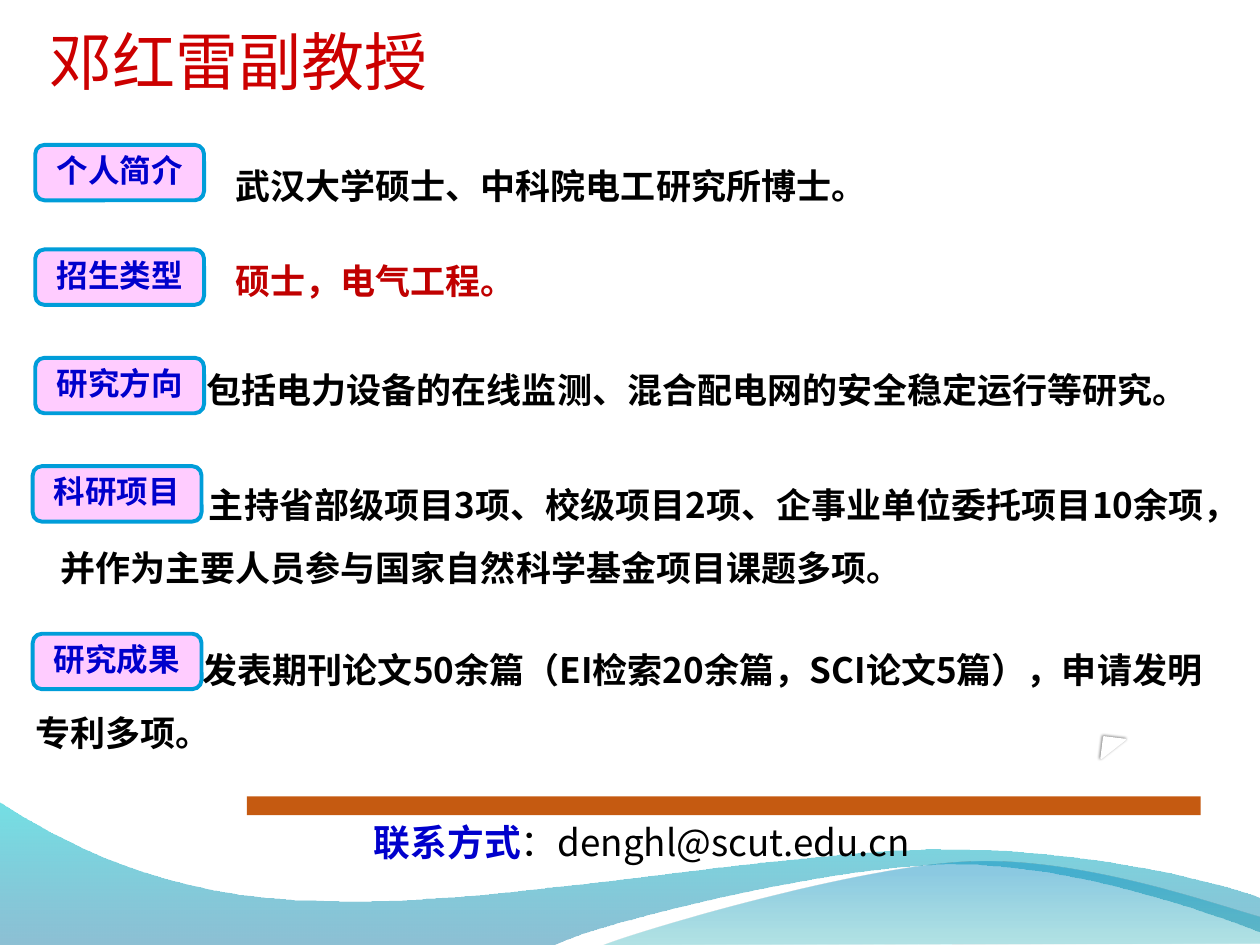
from lxml import etree
from pptx import Presentation
from pptx.dml.color import RGBColor
from pptx.enum.shapes import MSO_SHAPE
from pptx.enum.text import MSO_ANCHOR, MSO_AUTO_SIZE, PP_ALIGN
from pptx.oxml.ns import qn
from pptx.util import Inches, Pt

ROUNDED = MSO_SHAPE.ROUNDED_RECTANGLE
RECTANGLE = MSO_SHAPE.RECTANGLE
TRIANGLE = MSO_SHAPE.RIGHT_TRIANGLE
TOP, BOTTOM = MSO_ANCHOR.TOP, MSO_ANCHOR.BOTTOM
FIXED = MSO_AUTO_SIZE.NONE
LEFT = PP_ALIGN.LEFT

FONT = "Noto Sans CJK SC"
COLORS = {
    "title": "CC0000", "label": "0000CC", "text": "000000", "accent": "C00000",
    "tag": "FFCCFF", "tag_line": "009DD9", "bar": "C55A11", "white": "FFFFFF",
}

# label, left, top
TAGS = [
    ("个人简介", 0.28, 1.15),
    ("招生类型", 0.28, 1.98),
    ("研究方向", 0.28, 2.84),
    ("科研项目", 0.26, 3.7),
    ("研究成果", 0.26, 5.03),
]
# text, colour, box, line spacing, (left margin, first-line indent)
DETAILS = [
    ("武汉大学硕士、中科院电工研究所博士。", "text", (1.77, 1.19, 8.27, 0.5), 1.2, (0, 0)),
    ("硕士，电气工程。", "accent", (1.77, 1.94, 6.26, 0.48), 1.2, (0, 0)),
    ("包括电力设备的在线监测、混合配电网的安全稳定运行等研究。", "text",
     (-0.26, 2.71, 10.02, 0.65), 1.5, (0.44, 1.36)),
    ("主持省部级项目3项、校级项目2项、企事业单位委托项目10余项，并作为主要人员参与国家自然科学基金项目课题多项。",
     "text", (-0.06, 3.62, 10.02, 1.16), 1.5, (0.44, 1.18)),
    ("发表期刊论文50余篇（EI检索20余篇，SCI论文5篇），申请发明专利多项。", "text",
     (-0.26, 4.93, 9.92, 1.58), 1.5, (0.44, 1.33)),
]
# Outline segments hold one point (a line) or three points (a curve);
# gradient stops are position, colour, opacity in percent.
WAVES = [
    ([[(0, 7.5)], [(4.4, 7.5)],
      [(4.76, 7.32), (6.64, 6.86), (7.58, 6.86)],
      [(8.53, 6.86), (9.58, 7.24), (10, 7.4)],
      [(10.01, 7.13)],
      [(9.83, 7.05), (8.7, 6.73), (7.46, 6.74)],
      [(6.22, 6.74), (3.82, 7.21), (2.57, 7.15)],
      [(1.29, 7.14), (0.46, 6.66), (-0.01, 6.36)]],
     [(0, "0074A1", 45), (1, "00C6CF", 55)]),
    ([[(4.79, 7.5)],
      [(5.09, 7.38), (6.82, 6.87), (7.69, 6.84)],
      [(8.56, 6.8), (9.61, 7.17), (10, 7.28)],
      [(10, 7.49)]],
     [(0, "00A1A9", 30), (0.8, "008BBF", 45)]),
]


def rgb(name):
    return RGBColor.from_string(COLORS[name])


def bend(wave, segments):
    """Join the three straight steps of each curved segment into one curve."""
    steps = iter(list(wave._element.iter(qn("a:moveTo"), qn("a:lnTo"))))
    for segment in segments:
        first, *others = [next(steps) for _ in segment]
        if others:
            first.tag = qn("a:cubicBezTo")
            for step in others:
                first.append(step[0])
                step.getparent().remove(step)


def add_wave(slide, segments, stops):
    points = [(round(x * 1000), round(y * 1000)) for part in segments for x, y in part]
    builder = slide.shapes.build_freeform(*points[0], scale=Inches(1) / 1000)
    builder.add_line_segments(points[1:], close=True)
    wave = builder.convert_to_shape()
    bend(wave, segments)
    wave.shadow.inherit = False
    wave.line.fill.background()
    wave.fill.gradient()
    wave.fill.gradient_angle = 90
    for stop, (position, color, _) in zip(wave.fill.gradient_stops, stops):
        stop.position = position
        stop.color.rgb = RGBColor.from_string(color)
    for color_node, (_, _, opacity) in zip(wave._element.spPr.iter(qn("a:srgbClr")), stops):
        etree.SubElement(color_node, qn("a:alpha"), val=str(opacity * 1000))


def add_filled(slide, kind, place, fill, line=None, width=0):
    shape = slide.shapes.add_shape(kind, *map(Inches, place))
    shape.shadow.inherit = False
    shape.fill.solid()
    shape.fill.fore_color.rgb = rgb(fill)
    if line:
        shape.line.color.rgb = rgb(line)
        shape.line.width = Pt(width)
    else:
        shape.line.fill.background()
    return shape


def add_corner(slide):
    """Add the small tilted triangle with its soft shadow."""
    corner = add_filled(slide, TRIANGLE, (8.75, 5.86, 0.17, 0.17), "white", "white", 1)
    corner.rotation = 7
    corner._element.spPr.find(qn("a:xfrm")).set("flipV", "1")
    effects = corner._element.spPr.find(qn("a:effectLst"))
    shadow = etree.SubElement(effects, qn("a:outerShdw"), blurRad=str(Pt(1.6)),
                              dist=str(Pt(0.5)), dir=str(215 * 60000),
                              algn="tl", rotWithShape="0")
    color = etree.SubElement(shadow, qn("a:srgbClr"), val=COLORS["text"])
    etree.SubElement(color, qn("a:alpha"), val="47000")


def add_text(slide, place, runs, size, margins=(0.1, 0.05, 0.1, 0.05), anchor=TOP, latin=FONT):
    """Add a box of (text, colour, bold) runs and return its paragraph."""
    frame = slide.shapes.add_textbox(*map(Inches, place)).text_frame
    frame.word_wrap = True
    frame.auto_size = FIXED
    frame.vertical_anchor = anchor
    (frame.margin_left, frame.margin_top,
     frame.margin_right, frame.margin_bottom) = map(Inches, margins)
    para = frame.paragraphs[0]
    para.alignment = LEFT
    for text, color, bold in runs:
        span = para.add_run()
        span.text = text
        font = span.font
        font.name, font.size, font.bold = latin, Pt(size), bold
        font.color.rgb = rgb(color)
        etree.SubElement(font._element, qn("a:ea"), typeface=FONT)
    return para


def main():
    deck = Presentation()
    deck.slide_width, deck.slide_height = Inches(10), Inches(7.5)
    page = deck.slides.add_slide(deck.slide_layouts[6])

    add_corner(page)
    for segments, stops in WAVES:
        add_wave(page, segments, stops)
    add_text(page, (0.39, 0.15, 7.63, 0.63), [("邓红雷副教授", "title", False)], 36,
             margins=(0, 0.05, 0, 0), anchor=BOTTOM, latin="Calibri")
    add_filled(page, RECTANGLE, (1.96, 6.32, 7.57, 0.15), "bar")

    for text, color, place, spacing, (margin, indent) in DETAILS:
        para = add_text(page, place, [(text, color, True)], 20)
        para.line_spacing = spacing
        properties = para._p.get_or_add_pPr()
        properties.set("marL", str(Inches(margin)))
        properties.set("indent", str(Inches(indent)))

    for label, left, top in TAGS:
        add_filled(page, ROUNDED, (left, top, 1.34, 0.44), "tag", "tag_line", 2.25)
        add_text(page, (left + 0.07, top, 1.22, 0.4), [(label, "label", True)], 18)

    add_text(page, (2.87, 6.46, 4.8, 0.45),
             [("联系方式", "label", True), ("：denghl@scut.edu.cn", "text", False)], 21)
    deck.save("out.pptx")


if __name__ == "__main__":
    main()
